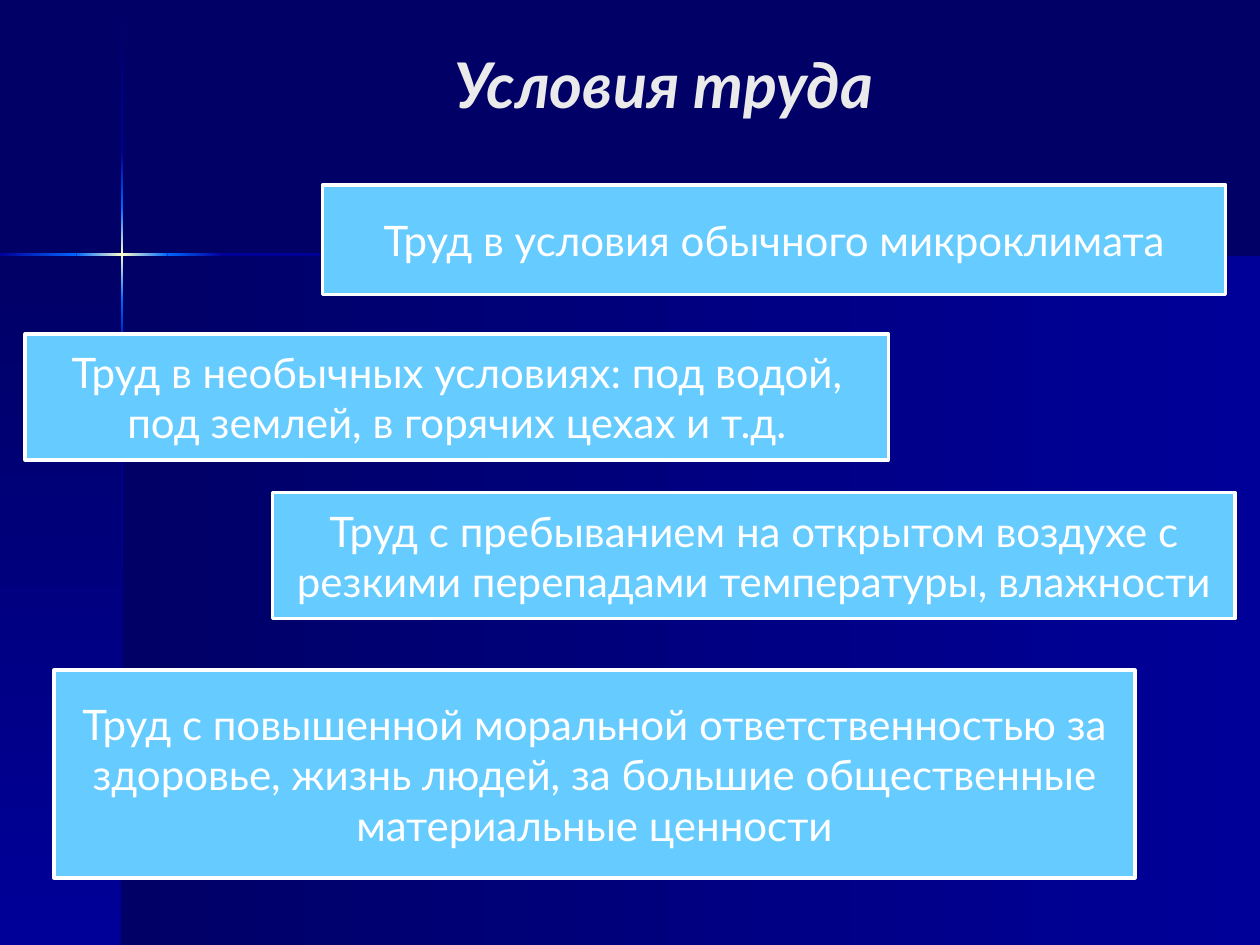
import copy
import itertools

import pptx
import pptx.dml.color
import pptx.enum.shapes
import pptx.enum.text
import pptx.oxml.ns
import pptx.util
from pptx.util import Cm

RGBColor = pptx.dml.color.RGBColor
NAVY = RGBColor(0x00, 0x00, 0x66)
BLUE = RGBColor(0x00, 0x00, 0x99)
AZURE = RGBColor(0x00, 0x66, 0xFF)
CREAM = RGBColor(0xFF, 0xFF, 0xCC)
SKY = RGBColor(0x66, 0xCC, 0xFF)
WHITE = RGBColor(0xFF, 0xFF, 0xFF)
PALE = RGBColor(0xEA, 0xEA, 0xEA)

WIDTH, HEIGHT = 25.4, 19.05
CROSS_X, CROSS_Y = 2.46, 5.13
BEAM = 0.05

TITLE_FONT = {"name": "Lato", "size": pptx.util.Pt(36), "bold": True, "italic": True}
CARD_FONT = {"name": "Lato", "size": pptx.util.Pt(24), "bold": False, "italic": False}

# Colours along a beam, from one end to the other
BEAM_COLORS = [
    (NAVY, BLUE),
    (BLUE, AZURE),
    (AZURE, CREAM, AZURE),
    (AZURE, BLUE),
    (BLUE, NAVY),
]

# Left, top, width, height in centimetres, and text
CARDS = [
    ((6.5, 3.73, 18.21, 2.21), "Труд в условия обычного микроклимата"),
    ((0.51, 6.73, 17.4, 2.54),
     "Труд в необычных условиях: под водой, под землей, в горячих цехах и т.д."),
    ((5.49, 9.93, 19.41, 2.54),
     "Труд с пребыванием на открытом воздухе с резкими перепадами температуры, влажности"),
    ((1.09, 13.51, 21.79, 4.19),
     "Труд с повышенной моральной ответственностью за здоровье, жизнь людей, "
     "за большие общественные материальные ценности"),
]


def add_rectangle(slide, box):
    shape = slide.shapes.add_shape(
        pptx.enum.shapes.MSO_SHAPE.RECTANGLE, *(Cm(value) for value in box))
    shape.shadow.inherit = False
    return shape


def add_gradient(slide, box, colors, vertical):
    shape = add_rectangle(slide, box)
    shape.line.fill.background()
    fill = shape.fill
    fill.gradient()
    fill.gradient_angle = 270 if vertical else 0
    # Add stops beyond the two that a new gradient has
    stop_list = shape._element.spPr.find(".//" + pptx.oxml.ns.qn("a:gsLst"))
    for _ in colors[2:]:
        stop_list.insert(1, copy.deepcopy(stop_list[0]))
    for index, (stop, color) in enumerate(zip(fill.gradient_stops, colors)):
        stop.position = index / (len(colors) - 1)
        stop.color.rgb = color


def add_beam(slide, ends, segment_colors, vertical):
    for (start, end), colors in zip(itertools.pairwise(ends), segment_colors):
        if vertical:
            box = (CROSS_X - BEAM / 2, start, BEAM, end - start)
        else:
            box = (start, CROSS_Y - BEAM / 2, end - start, BEAM)
        add_gradient(slide, box, colors, vertical)


def add_backdrop(slide):
    background = slide.background.fill
    background.solid()
    background.fore_color.rgb = NAVY
    # Panels below the horizon
    depth = HEIGHT - CROSS_Y
    add_gradient(slide, (CROSS_X, CROSS_Y, WIDTH - CROSS_X, depth), (NAVY, BLUE), False)
    add_gradient(slide, (0, CROSS_Y, CROSS_X, depth), (NAVY, BLUE), True)
    # Crossing beams of light
    add_beam(slide, [0.03, 3.07, 4.19, 6.05, 7.16, HEIGHT], BEAM_COLORS, True)
    add_beam(slide, [0, 1.54, 3.38, 4.5, WIDTH], BEAM_COLORS[1:], False)


def write_text(shape, text, font_format, color):
    frame = shape.text_frame
    frame.word_wrap = True
    frame.vertical_anchor = pptx.enum.text.MSO_ANCHOR.MIDDLE
    paragraph = frame.paragraphs[0]
    paragraph.alignment = pptx.enum.text.PP_ALIGN.CENTER
    run = paragraph.add_run()
    run.text = text
    for name, value in font_format.items():
        setattr(run.font, name, value)
    run.font.color.rgb = color


def add_title(slide, box, text):
    title = slide.shapes.add_textbox(*(Cm(value) for value in box))
    write_text(title, text, TITLE_FONT, PALE)


def add_card(slide, box, text):
    card = add_rectangle(slide, box)
    card.fill.solid()
    card.fill.fore_color.rgb = SKY
    card.line.color.rgb = WHITE
    card.line.width = pptx.util.Pt(2)
    write_text(card, text, CARD_FONT, WHITE)


def main():
    presentation = pptx.Presentation()
    presentation.slide_width = Cm(WIDTH)
    presentation.slide_height = Cm(HEIGHT)
    slide = presentation.slides.add_slide(presentation.slide_layouts[6])
    add_backdrop(slide)
    add_title(slide, (2.9, 0.53, 20.96, 2.29), "Условия труда")
    for box, text in CARDS:
        add_card(slide, box, text)
    presentation.save("out.pptx")


if __name__ == "__main__":
    main()
